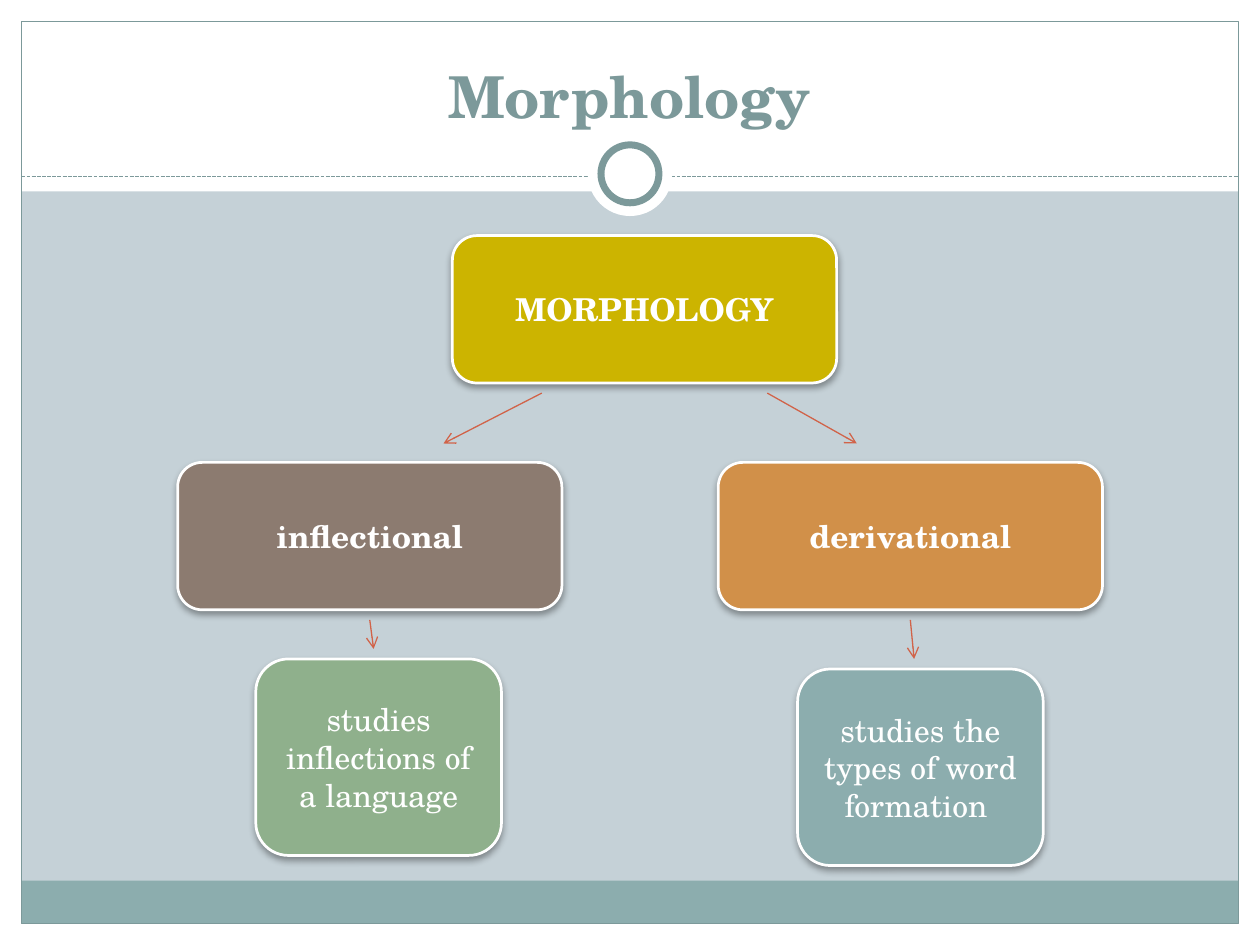
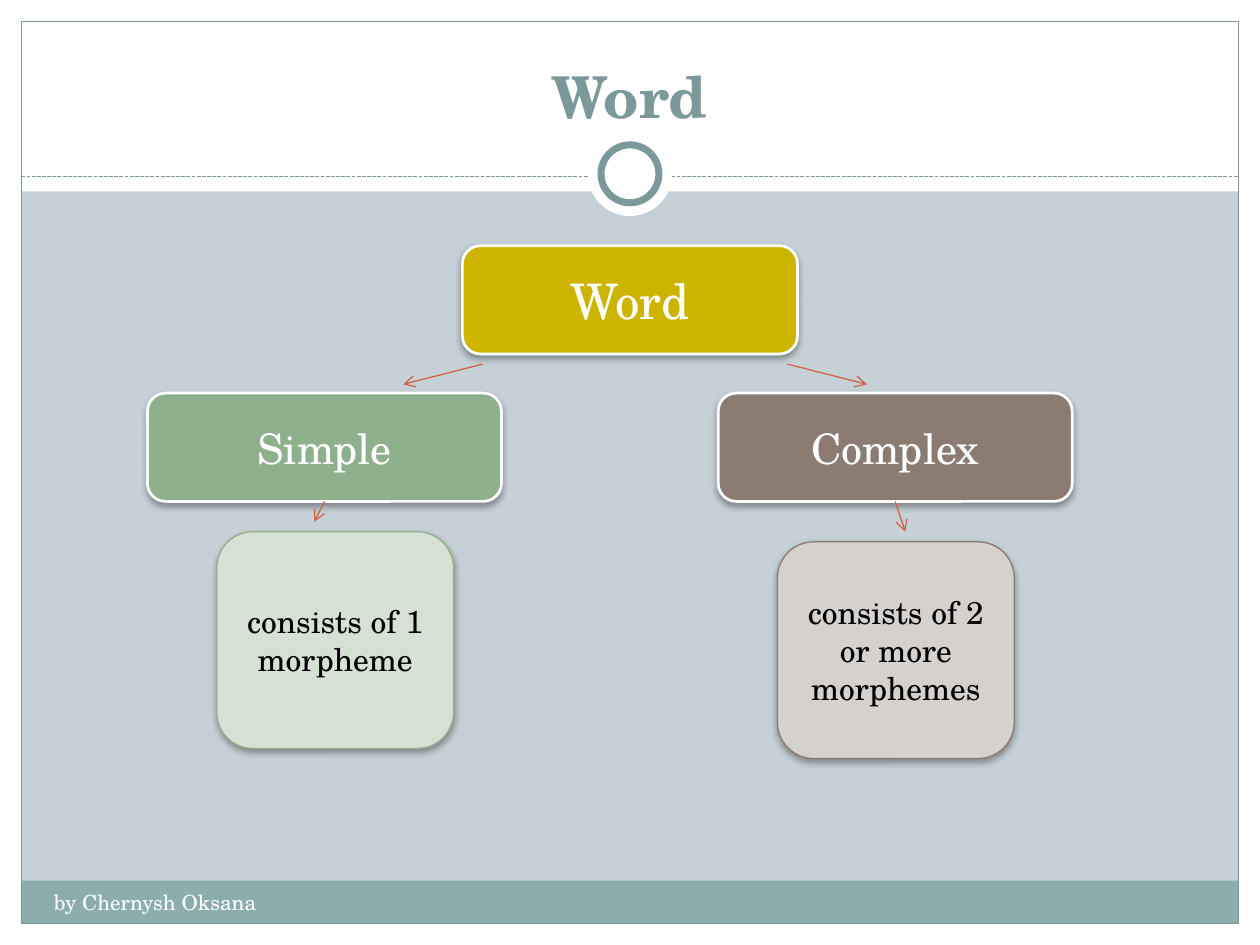
from dataclasses import dataclass

from lxml.etree import SubElement
from pptx import Presentation
from pptx.dml.color import RGBColor
from pptx.enum.dml import MSO_LINE
from pptx.enum.shapes import MSO_CONNECTOR, MSO_SHAPE
from pptx.enum.text import MSO_ANCHOR, MSO_AUTO_SIZE, PP_ALIGN
from pptx.oxml import parse_xml
from pptx.oxml.ns import nsdecls, qn
from pptx.util import Inches, Pt

FONT = "TeX Gyre Schola"
WHITE = RGBColor(0xFF, 0xFF, 0xFF)
BLACK = RGBColor(0x00, 0x00, 0x00)
BACKDROP = RGBColor(0xC5, 0xD1, 0xD7)
TEAL = RGBColor(0x8C, 0xAD, 0xAE)
DARK_TEAL = RGBColor(0x7C, 0x99, 0x9A)
GOLD = RGBColor(0xCC, 0xB4, 0x00)
ORANGE = RGBColor(0xD1, 0x90, 0x49)
BROWN = RGBColor(0x8C, 0x7B, 0x70)
GREEN = RGBColor(0x8F, 0xB0, 0x8C)
PALE_GREEN = RGBColor(0xD6, 0xE0, 0xD5)
PALE_BROWN = RGBColor(0xD5, 0xD1, 0xCF)
RED = RGBColor(0xD1, 0x63, 0x49)

WIDTH, HEIGHT, MARGIN = 10, 7.5, 0.17
HEADER_HEIGHT, RULE_TOP, RING_MIDDLE = 1.52, 1.4, 1.38
ARROW_GAP = 0.08

SHADOW = (
    f'<a:effectLst {nsdecls("a")}>'
    '<a:outerShdw blurRad="50800" dist="25400" dir="5400000" rotWithShape="0">'
    '<a:srgbClr val="000000"><a:alpha val="35000"/></a:srgbClr>'
    "</a:outerShdw></a:effectLst>"
)


@dataclass
class Box:
    left: float
    top: float
    width: float
    height: float

    @property
    def center(self):
        return self.left + self.width / 2

    @property
    def bottom(self):
        return self.top + self.height

    def inches(self):
        return [Inches(v) for v in (self.left, self.top, self.width, self.height)]


@dataclass
class Card:
    text: str
    size: float
    fill: RGBColor
    bold: bool = False
    color: RGBColor = WHITE
    border: RGBColor = WHITE
    border_width: float = 1.57


@dataclass
class Branch:
    head: Card
    head_box: Box
    leaf: Card
    leaf_box: Box
    root_arrow: tuple
    tip_shift: float = 0


def add_text(frame, text, size, color, bold=False, align=PP_ALIGN.CENTER):
    frame.word_wrap = True
    para = frame.paragraphs[0]
    para.alignment = align
    span = para.add_run()
    span.text = text
    span.font.name = FONT
    span.font.size = Pt(size)
    span.font.bold = bold
    span.font.color.rgb = color


def add_panel(page, kind, box, fill=None, border=None, border_width=0.75):
    panel = page.shapes.add_shape(kind, *box.inches())
    panel.shadow.inherit = False
    if fill is None:
        panel.fill.background()
    else:
        panel.fill.solid()
        panel.fill.fore_color.rgb = fill
    if border is None:
        panel.line.fill.background()
    else:
        panel.line.color.rgb = border
        panel.line.width = Pt(border_width)
    return panel


def add_line(page, start, end, color):
    ends = [Inches(v) for v in (*start, *end)]
    line = page.shapes.add_connector(MSO_CONNECTOR.STRAIGHT, *ends)
    line.line.color.rgb = color
    line.line.width = Pt(0.75)
    SubElement(line.element.spPr, qn("a:effectLst"))
    return line


def add_arrow(page, start, end):
    arrow = add_line(page, start, end, RED)
    SubElement(arrow.line._get_or_add_ln(), qn("a:tailEnd")).set("type", "arrow")


def add_card(page, box, card):
    panel = add_panel(page, MSO_SHAPE.ROUNDED_RECTANGLE, box,
                      card.fill, card.border, card.border_width)
    properties = panel.element.spPr
    properties.replace(properties.find(qn("a:effectLst")), parse_xml(SHADOW))
    panel.text_frame.vertical_anchor = MSO_ANCHOR.MIDDLE
    add_text(panel.text_frame, card.text, card.size, card.color, card.bold)


def ring_box(size):
    return Box((WIDTH - size) / 2, RING_MIDDLE - size / 2, size, size)


def draw_frame(page):
    rect = MSO_SHAPE.RECTANGLE
    inner = WIDTH - 2 * MARGIN
    for strip in (
        Box(0, HEIGHT - MARGIN, WIDTH, MARGIN),
        Box(0, 0, WIDTH, HEADER_HEIGHT),
        Box(0, 0, MARGIN, HEIGHT),
        Box(WIDTH - MARGIN, 0, MARGIN, HEIGHT),
    ):
        add_panel(page, rect, strip, WHITE)
    add_panel(page, rect, Box(MARGIN, 6.99, inner, 0.34), TEAL)
    add_panel(page, rect, Box(MARGIN, MARGIN, inner, HEIGHT - 2 * MARGIN), border=DARK_TEAL)
    rule = add_line(page, (MARGIN, RULE_TOP), (WIDTH - MARGIN, RULE_TOP), DARK_TEAL)
    rule.line.dash_style = MSO_LINE.SQUARE_DOT
    add_panel(page, MSO_SHAPE.OVAL, ring_box(0.67), WHITE)
    add_panel(page, MSO_SHAPE.OVAL, ring_box(0.46), WHITE, DARK_TEAL, 4)


def set_up_layout(deck, page):
    layout = page.slide_layout
    layout.background.fill.solid()
    layout.background.fill.fore_color.rgb = BACKDROP
    draw_frame(page)
    parts = [part for part in page.shapes if not part.is_placeholder]
    for number, part in enumerate(parts, start=100):
        part.element.xpath(".//p:cNvPr")[0].set("id", str(number))
        layout.shapes.element.append(part.element)


def set_title(page, box, text):
    title = page.shapes.title
    title.left, title.top, title.width, title.height = box.inches()
    title.text_frame.auto_size = MSO_AUTO_SIZE.NONE
    title.text_frame.vertical_anchor = MSO_ANCHOR.BOTTOM
    add_text(title.text_frame, text, 33, DARK_TEAL, bold=True)


def draw_footer(page, box, text):
    footer = page.shapes.add_textbox(*box.inches())
    add_text(footer.text_frame, text, 12, WHITE, align=PP_ALIGN.LEFT)


def draw_tree(page, root_box, root, branches, stem_gap):
    add_card(page, root_box, root)
    for branch in branches:
        head, leaf = branch.head_box, branch.leaf_box
        add_card(page, head, branch.head)
        add_card(page, leaf, branch.leaf)
        start, tip, tip_gap = branch.root_arrow
        add_arrow(page, (start, root_box.bottom + ARROW_GAP), (tip, head.top - tip_gap))
        add_arrow(page, (head.center, head.bottom + stem_gap),
                  (head.center + branch.tip_shift, leaf.top - ARROW_GAP))


def draw_morphology(page):
    branches = [
        Branch(Card("inflectional", 18, BROWN, bold=True), Box(1.41, 3.67, 3.05, 1.17),
               Card("studies inflections of a language", 18, GREEN),
               Box(2.03, 5.23, 1.95, 1.56), (4.3, 3.52, 0.15), 0.03),
        Branch(Card("derivational", 18, ORANGE, bold=True), Box(5.7, 3.67, 3.05, 1.17),
               Card("studies the types of word formation ", 18, TEAL),
               Box(6.33, 5.31, 1.95, 1.56), (6.09, 6.8, 0.15), 0.03),
    ]
    root = Card("MORPHOLOGY", 18, GOLD, bold=True)
    draw_tree(page, Box(3.59, 1.87, 3.05, 1.17), root, branches, ARROW_GAP)


def draw_word(page):
    def leaf(text, fill, border):
        return Card(text, 18, fill, color=BLACK, border=border, border_width=0.75)

    branches = [
        Branch(Card("Simple", 24, GREEN), Box(1.17, 3.12, 2.81, 0.86),
               leaf("consists of 1 morpheme", PALE_GREEN, GREEN),
               Box(1.72, 4.22, 1.88, 1.72), (3.83, 3.2, 0.07), -0.08),
        Branch(Card("Complex", 24, BROWN), Box(5.7, 3.12, 2.81, 0.86),
               leaf("consists of 2 or more morphemes", PALE_BROWN, BROWN),
               Box(6.17, 4.3, 1.88, 1.72), (6.25, 6.88, 0.07), 0.08),
    ]
    draw_tree(page, Box(3.67, 1.95, 2.66, 0.86), Card("Word", 28, GOLD), branches, 0)
    draw_footer(page, Box(0.33, 7.01, 3.92, 0.4), "by Chernysh Oksana")


def main():
    deck = Presentation()
    deck.slide_width, deck.slide_height = Inches(WIDTH), Inches(HEIGHT)
    title_only = deck.slide_layouts[5]
    slides = (("Morphology", draw_morphology), ("Word", draw_word))
    for number, (title, draw_body) in enumerate(slides):
        page = deck.slides.add_slide(title_only)
        if number == 0:
            set_up_layout(deck, page)
        set_title(page, Box(0.33, 0.25, 9.33, 0.83), title)
        draw_body(page)
    deck.save("out.pptx")


if __name__ == "__main__":
    main()
